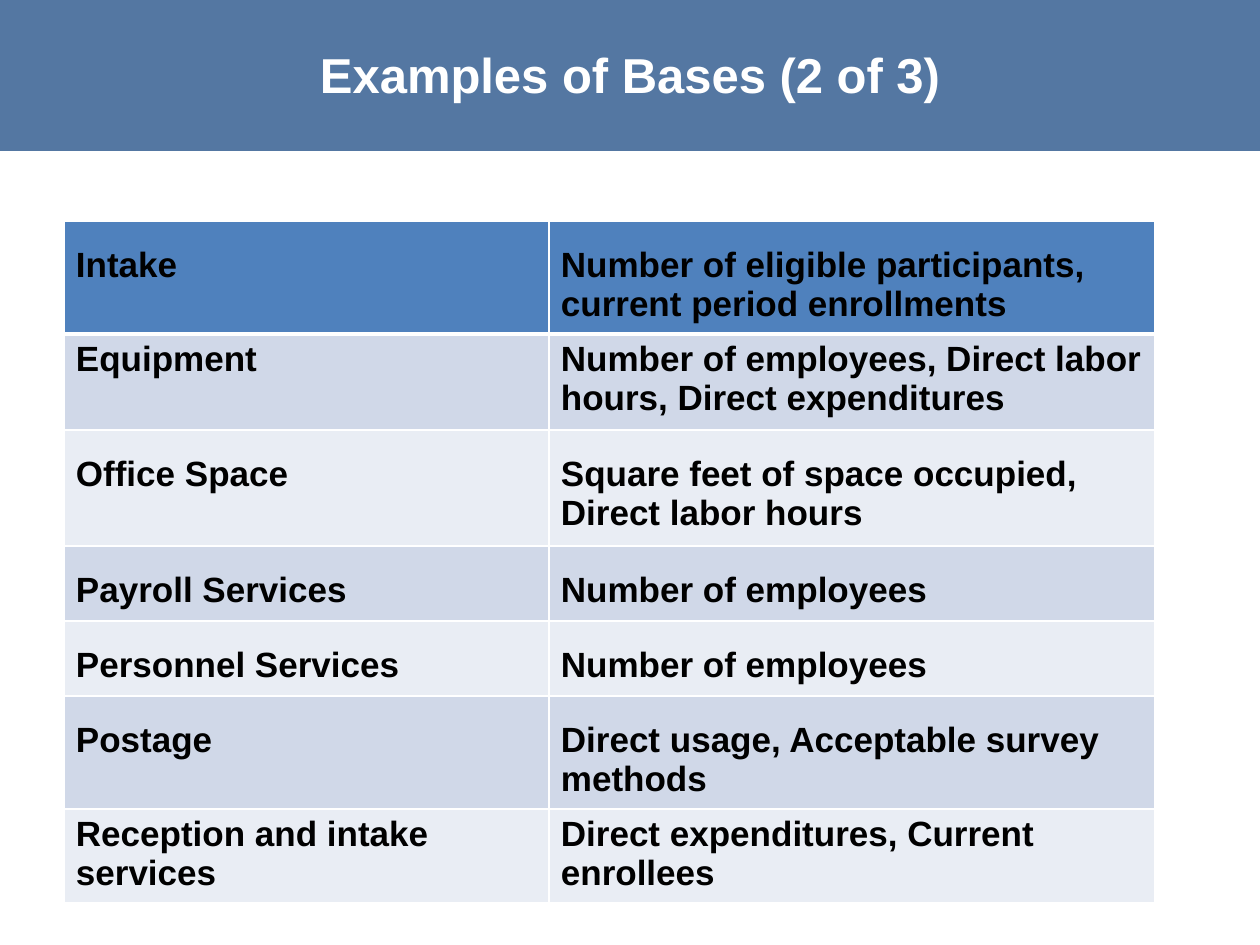
from lxml.etree import SubElement
from pptx import Presentation
from pptx.dml.color import RGBColor
from pptx.enum.shapes import MSO_SHAPE as SHAPE
from pptx.enum.text import MSO_ANCHOR as ANCHOR, PP_ALIGN as ALIGN
from pptx.oxml.ns import qn
from pptx.util import Emu, Pt

PX = 914400 // 126
WHITE = RGBColor(0xFF, 0xFF, 0xFF)
BLACK = RGBColor(0, 0, 0)
BAND = RGBColor(0x37, 0x60, 0x92)
HEADER = RGBColor(0x4F, 0x81, 0xBD)
STRIPES = (RGBColor(0xE9, 0xED, 0xF4), RGBColor(0xD0, 0xD8, 0xE8))

COLUMNS = (485, 606)
TIGHT, ROOMY = 6, 25  # top margins of the cells
ROWS = (  # height, top margin, service, bases
    (113, ROOMY, "Intake",
     "Number of eligible participants, current period enrollments"),
    (96, TIGHT, "Equipment",
     "Number of employees, Direct labor hours, Direct expenditures"),
    (116, ROOMY, "Office Space",
     "Square feet of space occupied, Direct labor hours"),
    (75, ROOMY, "Payroll Services", "Number of employees"),
    (75, ROOMY, "Personnel Services", "Number of employees"),
    (113, ROOMY, "Postage", "Direct usage, Acceptable survey methods"),
    (94, TIGHT, "Reception and intake services",
     "Direct expenditures, Current enrollees"),
)


def px(*lengths):
    return [Emu(n * PX) for n in lengths]


def set_text(tf, text, size, color, align):
    tf.text = text
    p = tf.paragraphs[0]
    p.alignment = align
    font = p.runs[0].font
    for name, value in dict(name="Arial", size=Pt(size), bold=True).items():
        setattr(font, name, value)
    font.color.rgb = color


def add_band(s):
    """Put the translucent band behind everything else."""
    band = s.shapes.add_shape(SHAPE.RECTANGLE, *px(-1, 0, 1261, 151))
    band.shadow.inherit = False
    band.line.fill.background()
    band.fill.solid()
    band.fill.fore_color.rgb = BAND
    color = band._element.spPr.find(".//" + qn("a:srgbClr"))
    SubElement(color, qn("a:alpha"), val="85000")
    s.shapes._spTree.insert(2, band._element)


def set_title(s, text):
    title = s.shapes.title
    title.left, title.top, title.width, title.height = px(0, 0, 1260, 147)
    title.text_frame.vertical_anchor = ANCHOR.MIDDLE
    set_text(title.text_frame, text, 28, WHITE, ALIGN.CENTER)


def set_borders(cell, top, bottom):
    tc_pr = cell._tc.get_or_add_tcPr()
    for side, width in dict(L=1, R=1, T=top, B=bottom).items():
        line = SubElement(tc_pr, qn(f"a:ln{side}"), w=str(Pt(width)))
        fill = SubElement(line, qn("a:solidFill"))
        SubElement(fill, qn("a:srgbClr"), val=str(WHITE))


def format_cell(cell, row, margin_top, text):
    margins = px(12, margin_top, 12, 6)
    for side, margin in zip(("left", "top", "right", "bottom"), margins):
        setattr(cell, f"margin_{side}", margin)
    set_text(cell.text_frame, text, 20, BLACK, ALIGN.LEFT)
    set_borders(cell, 3 if row == 1 else 1, 3 if row == 0 else 1)
    cell.fill.solid()
    cell.fill.fore_color.rgb = STRIPES[row % 2] if row else HEADER


def add_bases_table(s):
    height = sum(row[0] for row in ROWS)
    frame = s.shapes.add_table(len(ROWS), len(COLUMNS),
                               *px(64, 221, sum(COLUMNS), height))
    table = frame.table
    for column, width in zip(table.columns, px(*COLUMNS)):
        column.width = width
    for i, (row_height, margin_top, *texts) in enumerate(ROWS):
        table.rows[i].height = Emu(row_height * PX)
        for j, text in enumerate(texts):
            format_cell(table.cell(i, j), i, margin_top, text)


def main():
    prs = Presentation()
    prs.slide_width, prs.slide_height = px(1260, 945)
    s = prs.slides.add_slide(prs.slide_layouts[5])
    add_band(s)
    set_title(s, "Examples of Bases (2 of 3)")
    add_bases_table(s)
    prs.save("out.pptx")


if __name__ == "__main__":
    main()
